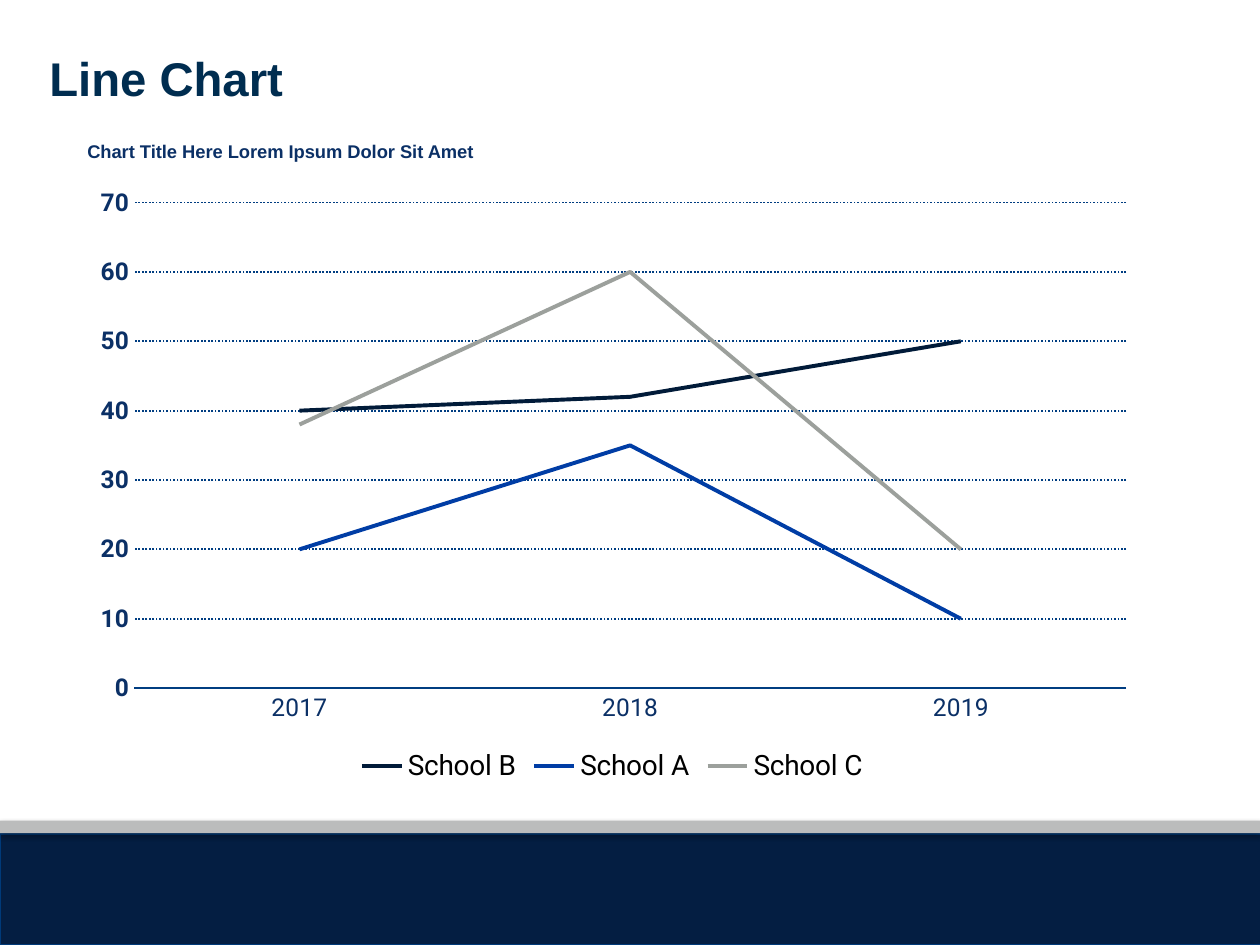
from dataclasses import dataclass

from lxml.etree import SubElement
from pptx import Presentation
from pptx.chart.data import CategoryChartData
from pptx.dml.color import RGBColor
from pptx.enum.chart import XL_CHART_TYPE, XL_LEGEND_POSITION, XL_MARKER_STYLE, XL_TICK_MARK
from pptx.enum.dml import MSO_LINE
from pptx.enum.shapes import MSO_SHAPE
from pptx.enum.text import MSO_ANCHOR, PP_ALIGN
from pptx.oxml.ns import qn
from pptx.util import Pt


@dataclass(frozen=True)
class Theme:
    """Colours, fonts and type sizes of the slide."""

    heading: str = "002D50"
    label: str = "0B3066"
    rule: str = "003D81"
    footer: str = "041E42"
    footer_edge: str = "003A79"
    stripe: str = "BBBCBC"
    black: str = "000000"
    school_a: str = "003DA5"
    school_b: str = "011B39"
    school_c: str = "9CA09C"
    text_font: str = "Arial"
    chart_font: str = "Roboto"
    title_size: float = 27
    caption_size: float = 10.5
    axis_size: float = 14
    legend_size: float = 16


class SlideBuilder:
    """Draws styled elements on the current slide."""

    def __init__(self, slide, theme):
        """Keep the slide and its theme."""
        self.slide = slide
        self.theme = theme

    def style(self, font, name, size, color, bold=False):
        """Apply a typeface, size, colour and weight to a font."""
        font.name, font.size, font.bold = name, Pt(size), bold
        font.color.rgb = RGBColor.from_string(color)

    def band(self, left, top, width, height, color, edge=None):
        """Add a filled band that keeps the soft shadow of the deck theme."""
        band = self.slide.shapes.add_shape(
            MSO_SHAPE.RECTANGLE, Pt(left), Pt(top), Pt(width), Pt(height))
        band.fill.solid()
        band.fill.fore_color.rgb = RGBColor.from_string(color)
        if edge:
            band.line.color.rgb = RGBColor.from_string(edge)
            band.line.width = Pt(0.75)
        else:
            band.line.fill.background()

    def title(self, wording, left, top, width, height):
        """Place and format the title placeholder."""
        title = self.slide.shapes.title
        title.left, title.top, title.width, title.height = map(Pt, (left, top, width, height))
        frame = title.text_frame
        frame.text = wording
        frame.vertical_anchor = MSO_ANCHOR.TOP
        frame.margin_top = Pt(3.4)
        frame.paragraphs[0].alignment = PP_ALIGN.LEFT
        self.style(frame.paragraphs[0].runs[0].font, self.theme.text_font,
                   self.theme.title_size, self.theme.heading, True)

    def caption(self, wording, left, top, width, height):
        """Add the bold caption above the chart."""
        frame = self.slide.shapes.add_textbox(
            Pt(left), Pt(top), Pt(width), Pt(height)).text_frame
        frame.word_wrap = True
        frame.text = wording
        self.style(frame.paragraphs[0].runs[0].font, self.theme.text_font,
                   self.theme.caption_size, self.theme.label, True)

    def line_chart(self, years, schools, left, top, width, height):
        """Add a line chart from a mapping of name to values and colour."""
        scores = CategoryChartData(number_format="#,##0")
        scores.categories = years
        for name, (values, _) in schools.items():
            scores.add_series(name, values)
        chart = self.slide.shapes.add_chart(
            XL_CHART_TYPE.LINE, Pt(left), Pt(top), Pt(width), Pt(height), scores).chart
        chart.has_title = False
        self.style(chart.font, self.theme.chart_font, self.theme.axis_size, self.theme.label)
        plot = chart.plots[0]
        plot.vary_by_categories = False
        for school, (_, color) in zip(plot.series, schools.values()):
            school.smooth = False
            school.marker.style = XL_MARKER_STYLE.NONE
            school.format.line.color.rgb = RGBColor.from_string(color)
            school.format.line.width = Pt(2.25)
        self.axes(chart)
        self.legend(chart)
        self.plot_area(chart, x=0.0525, y=0.045, w=0.9285, h=0.793)
        self.lead_with_second(chart)

    def lead_with_second(self, chart):
        """Draw and list the second series ahead of the first."""
        first, second = chart.element.findall(".//" + qn("c:ser"))[:2]
        first.addprevious(second)

    def axes(self, chart):
        """Format both axes and the dotted gridlines."""
        rule = RGBColor.from_string(self.theme.rule)
        for axis, bold in ((chart.category_axis, False), (chart.value_axis, True)):
            axis.major_tick_mark = axis.minor_tick_mark = XL_TICK_MARK.NONE
            self.style(axis.tick_labels.font, self.theme.chart_font,
                       self.theme.axis_size, self.theme.label, bold)
        chart.category_axis.format.line.color.rgb = rule
        chart.category_axis.format.line.width = Pt(0.75)
        scale = chart.value_axis
        scale.minimum_scale, scale.maximum_scale, scale.major_unit = 0, 70, 10
        scale.tick_labels.number_format = "#,##0"
        scale.tick_labels.number_format_is_linked = False
        scale.format.line.fill.background()
        grid = scale.major_gridlines.format.line
        grid.color.rgb = rule
        grid.width = Pt(1)
        grid.dash_style = MSO_LINE.ROUND_DOT

    def legend(self, chart):
        """Show the legend below the plot."""
        chart.has_legend = True
        chart.legend.position = XL_LEGEND_POSITION.BOTTOM
        chart.legend.include_in_layout = False
        self.style(chart.legend.font, self.theme.chart_font,
                   self.theme.legend_size, self.theme.black)

    def plot_area(self, chart, **fractions):
        """Fix the inner plot area as fractions of the chart."""
        area = chart.element.find(".//" + qn("c:plotArea"))
        layout = area.find(qn("c:layout"))
        if layout is None:
            layout = area.makeelement(qn("c:layout"))
            area.insert(0, layout)
        manual = SubElement(layout, qn("c:manualLayout"))
        settings = {"layoutTarget": "inner", "xMode": "edge", "yMode": "edge", **fractions}
        for tag, value in settings.items():
            SubElement(manual, qn(f"c:{tag}")).set("val", str(value))


def main():
    """Build and save the line chart slide."""
    theme = Theme()
    deck = Presentation()
    deck.slide_width, deck.slide_height = Pt(720), Pt(540)
    builder = SlideBuilder(deck.slides.add_slide(deck.slide_layouts[5]), theme)
    builder.band(0, 476.6, 721.4, 63.4, theme.footer, theme.footer_edge)
    builder.band(0, 469, 720, 7.2, theme.stripe)
    schools = {
        "School A": ((20, 35, 10), theme.school_a),
        "School B": ((40, 42, 50), theme.school_b),
        "School C": ((38, 60, 20), theme.school_c),
    }
    builder.line_chart(("2017", "2018", "2019"), schools, 44.6, 100, 610.6, 350)
    builder.caption("Chart Title Here Lorem Ipsum Dolor Sit Amet", 42.8, 76.5, 425.5, 20)
    builder.title("Line Chart", 21, 24.5, 648, 62.6)
    deck.save("out.pptx")


if __name__ == "__main__":
    main()
